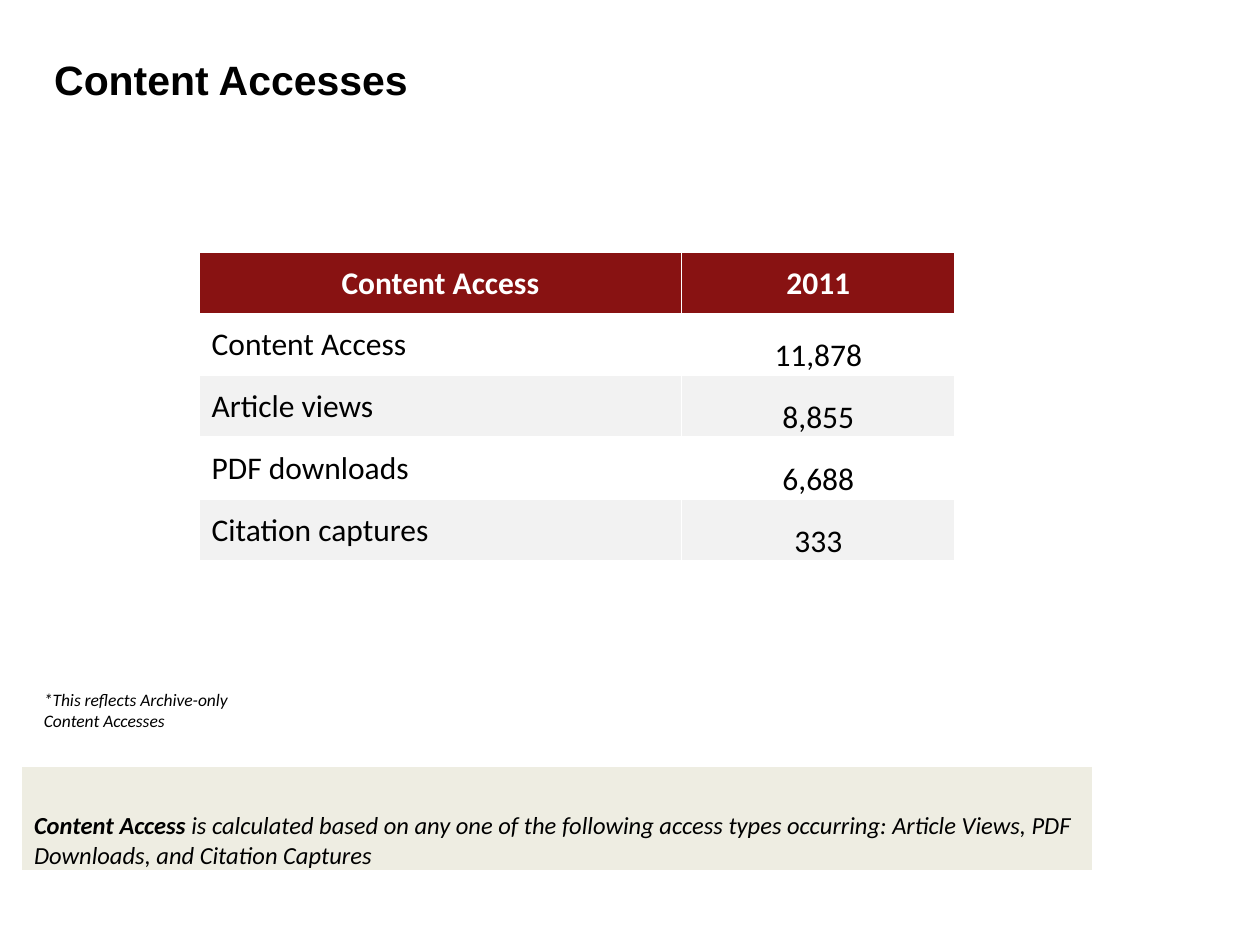
from pptx import Presentation
from pptx.dml.color import RGBColor
from pptx.enum.text import MSO_ANCHOR, MSO_AUTO_SIZE, PP_ALIGN
from pptx.util import Inches, Pt

# Content
TITLE = "Content Accesses"
ROWS = [
    ("Content Access", "2011"),
    ("Content Access", "11,878"),
    ("Article views", "8,855"),
    ("PDF downloads", "6,688"),
    ("Citation captures", "333"),
]
FOOTNOTE = "*This reflects Archive-only Content Accesses"
TERM = "Content Access "
MEANING = ("is calculated based on any one of the following access types occurring: "
           "Article Views, PDF Downloads, and Citation Captures")

# Layout in inches: left, top, width, height
TITLE_BOX = (0.33, 0.25, 7.5, 0.75)
FOOT_BOX = (0.25, 5.42, 1.92, 0.44)
DATA_AT, DATA_COLS, DATA_ROW = (1.58, 2), (3.83, 2.17), 0.49
NOTE_AT, NOTE_COLS, NOTE_ROW = (0.17, 6.08), (8.5,), 0.83

RED, GREY, CREAM = "881212", "F2F2F2", "EEEDE2"
MID, LOW = MSO_ANCHOR.MIDDLE, MSO_ANCHOR.BOTTOM


def color(code):
    return RGBColor.from_string(code)


def write(para, text, size=18, font="Calibri", ink="000000",
          bold=False, italic=False, align=PP_ALIGN.LEFT):
    para.alignment = align
    run = para.add_run()
    run.text = text
    face = run.font
    face.name, face.size = font, Pt(size)
    face.bold, face.italic = bold, italic
    face.color.rgb = color(ink)


def grid(slide, at, cols, count, high):
    size = (sum(cols), count * high)
    table = slide.shapes.add_table(count, len(cols), *map(Inches, at + size)).table
    for col, wide in zip(table.columns, cols):
        col.width = Inches(wide)
    for row in table.rows:
        row.height = Inches(high)
    return table


def style(cell, fill, anchor, insets):
    if fill:
        cell.fill.solid()
        cell.fill.fore_color.rgb = color(fill)
    else:
        cell.fill.background()
    cell.vertical_anchor = anchor
    (cell.margin_left, cell.margin_top,
     cell.margin_right, cell.margin_bottom) = map(Inches, insets)
    return cell.text_frame.paragraphs[0]


def main():
    deck = Presentation()
    deck.slide_width, deck.slide_height = Inches(10), Inches(7.5)
    slide = deck.slides.add_slide(deck.slide_layouts[5])

    # Title
    title = slide.shapes.title
    title.left, title.top, title.width, title.height = map(Inches, TITLE_BOX)
    title.text_frame.vertical_anchor = MID
    write(title.text_frame.paragraphs[0], TITLE, size=23.4, font="Arial", bold=True)

    # Definition band
    note = grid(slide, NOTE_AT, NOTE_COLS, 1, NOTE_ROW)
    para = style(note.cell(0, 0), CREAM, LOW, (0.1, 0.1, 0, 0))
    write(para, TERM, size=14, bold=True, italic=True)
    write(para, MEANING, size=14, italic=True)

    # Footnote
    frame = slide.shapes.add_textbox(*map(Inches, FOOT_BOX)).text_frame
    frame.word_wrap = True
    frame.auto_size = MSO_AUTO_SIZE.SHAPE_TO_FIT_TEXT
    write(frame.paragraphs[0], FOOTNOTE, size=10, italic=True)

    # Access counts: red header, every second body row shaded
    data = grid(slide, DATA_AT, DATA_COLS, len(ROWS), DATA_ROW)
    for r, row in enumerate(ROWS):
        head = r == 0
        fill = RED if head else None if r % 2 else GREY
        for c, text in enumerate(row):
            label = c == 0 and not head
            para = style(data.cell(r, c), fill, MID if head or label else LOW,
                         (0.1 if label else 0.01, 0.01, 0.01, 0))
            write(para, text, bold=head, ink="FFFFFF" if head else "000000",
                  align=PP_ALIGN.LEFT if label else PP_ALIGN.CENTER)

    deck.save("out.pptx")


if __name__ == "__main__":
    main()
